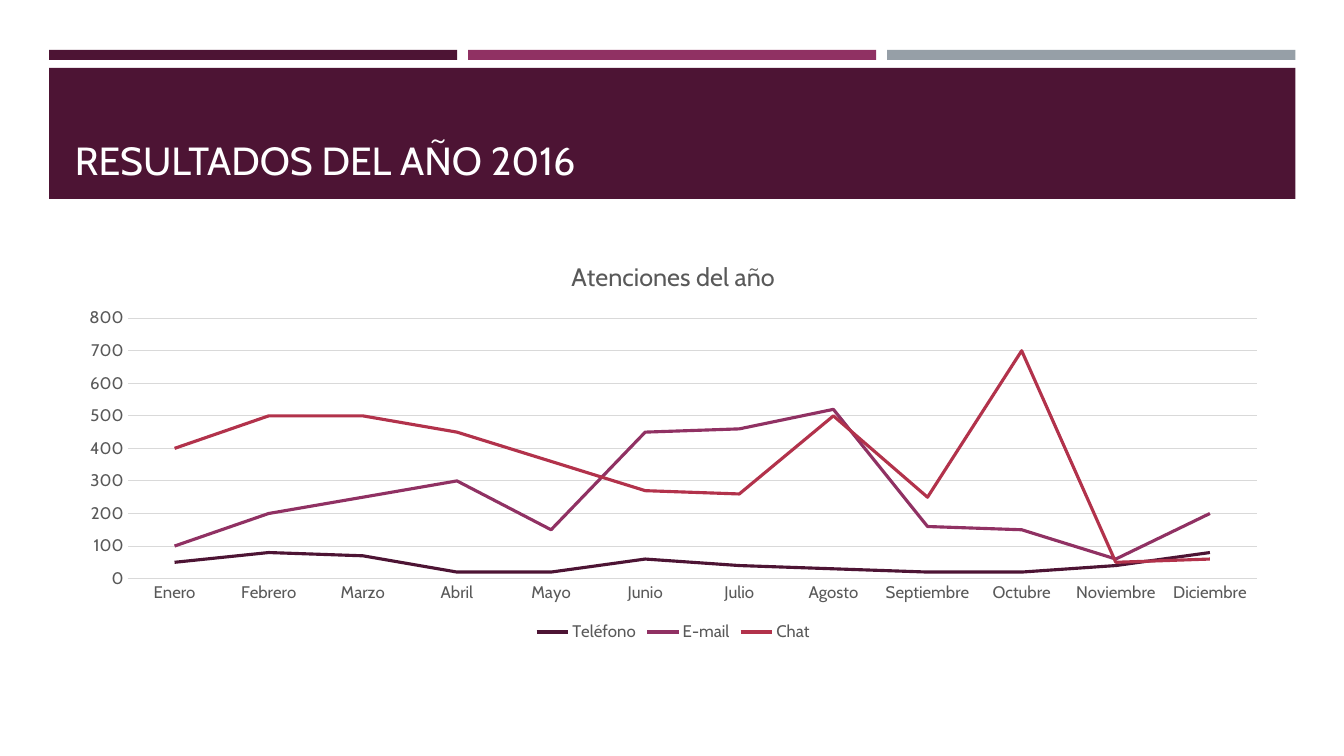
from pptx import Presentation
from pptx import util as u
from pptx.chart.data import CategoryChartData
from pptx.dml.color import RGBColor
from pptx.enum import chart as kinds, shapes, text

SCALE = 914400 / 100.8
FONT = "Cabin"
COLORS = {
    "plum": "4D1434",
    "magenta": "903163",
    "gray": "969FA7",
    "red": "B2324B",
    "white": "FFFFFF",
    "label": "595959",
    "grid": "D9D9D9",
}
MONTHS = ["Enero", "Febrero", "Marzo", "Abril", "Mayo", "Junio", "Julio",
          "Agosto", "Septiembre", "Octubre", "Noviembre", "Diciembre"]
CHANNELS = [
    ("Teléfono", "plum", [50, 80, 70, 20, 20, 60, 40, 30, 20, 20, 40, 80]),
    ("E-mail", "magenta", [100, 200, 250, 300, 150, 450, 460, 520, 160, 150, 60, 200]),
    ("Chat", "red", [400, 500, 500, 450, 360, 270, 260, 500, 250, 700, 50, 60]),
]


def place(*lengths):
    return [u.Emu(round(length * SCALE)) for length in lengths]


def style(font, size, color):
    font.name = FONT
    font.size = u.Pt(size)
    font.bold = False
    font.color.rgb = RGBColor.from_string(COLORS[color])


deck = Presentation()
deck.slide_width, deck.slide_height = u.Inches(13.33), u.Inches(7.5)
page = deck.slides.add_slide(deck.slide_layouts[6])

bands = [(49 + 419 * i, 50, 408, 10, color)
         for i, color in enumerate(["plum", "magenta", "gray"])]
bands.append((49, 68, 1246, 131, "plum"))
for left, top, width, height, color in bands:
    band = page.shapes.add_shape(shapes.MSO_SHAPE.RECTANGLE,
                                 *place(left, top, width, height))
    band.shadow.inherit = False
    band.fill.solid()
    band.fill.fore_color.rgb = RGBColor.from_string(COLORS[color])
    band.line.fill.background()

box = page.shapes.add_textbox(*place(65, 78, 1216, 111))
box.text_frame.word_wrap = True
box.text_frame.vertical_anchor = text.MSO_ANCHOR.BOTTOM
para = box.text_frame.paragraphs[0]
para.line_spacing = 0.9
span = para.add_run()
span.text = "RESULTADOS DEL AÑO 2016"
style(span.font, 28, "white")

data = CategoryChartData()
data.categories = MONTHS
for name, color, values in CHANNELS:
    data.add_series(name, values)
chart = page.shapes.add_chart(kinds.XL_CHART_TYPE.LINE,
                              *place(65, 241, 1216, 405), data).chart
style(chart.font, 12, "label")

chart.has_title = True
span = chart.chart_title.text_frame.paragraphs[0].add_run()
span.text = "Atenciones del año"
style(span.font, 18, "label")
chart.chart_title.include_in_layout = False

chart.has_legend = True
chart.legend.position = kinds.XL_LEGEND_POSITION.BOTTOM
chart.legend.include_in_layout = False
style(chart.legend.font, 12, "label")

for axis in (chart.category_axis, chart.value_axis):
    axis.major_tick_mark = kinds.XL_TICK_MARK.NONE
    axis.minor_tick_mark = kinds.XL_TICK_MARK.NONE
    style(axis.tick_labels.font, 12, "label")
chart.value_axis.minimum_scale = 0
chart.value_axis.maximum_scale = 800
chart.value_axis.major_unit = 100
chart.value_axis.format.line.fill.background()
for line in (chart.category_axis.format.line,
             chart.value_axis.major_gridlines.format.line):
    line.color.rgb = RGBColor.from_string(COLORS["grid"])
    line.width = u.Pt(0.75)

chart.plots[0].vary_by_categories = False
for series, (name, color, values) in zip(chart.plots[0].series, CHANNELS):
    series.smooth = False
    series.marker.style = kinds.XL_MARKER_STYLE.NONE
    series.format.line.color.rgb = RGBColor.from_string(COLORS[color])
    series.format.line.width = u.Pt(2.25)

deck.save("out.pptx")
